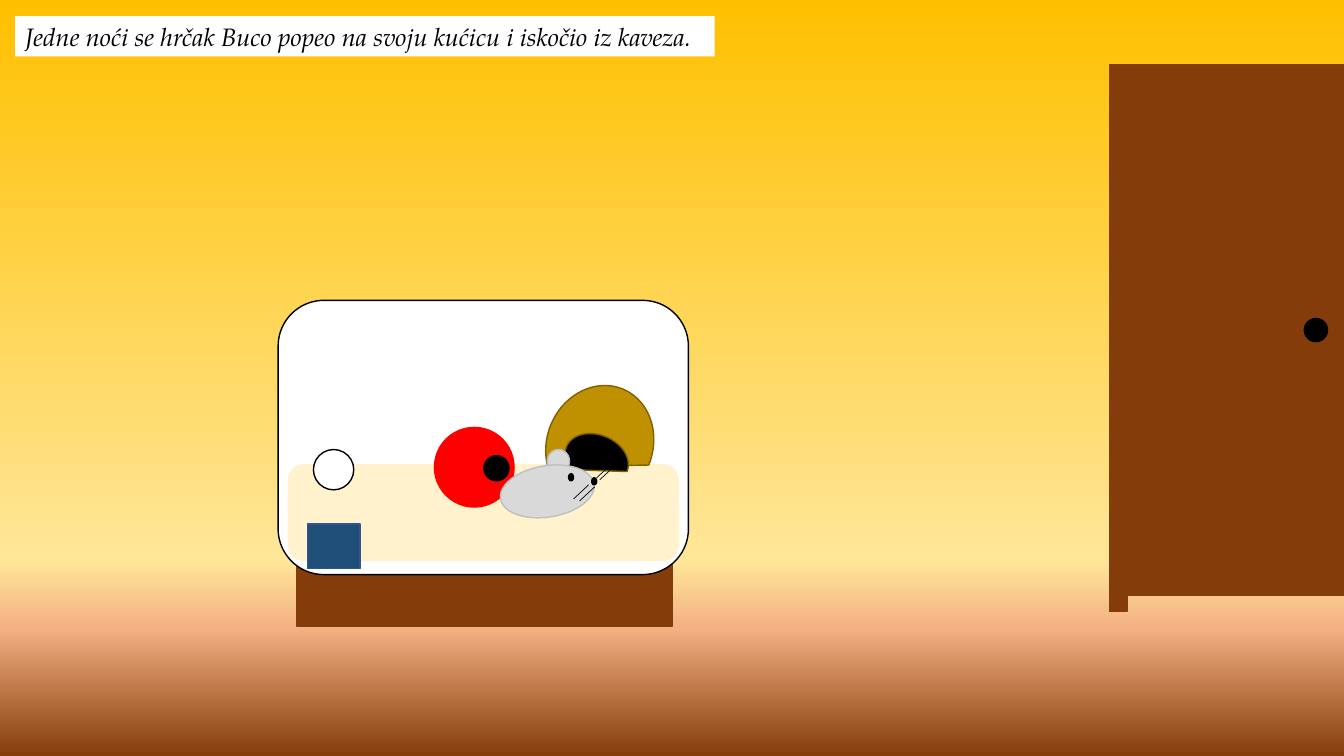
from dataclasses import dataclass

from lxml import etree
from pptx import Presentation
from pptx.dml.color import RGBColor
from pptx.enum import shapes, text
from pptx.oxml.ns import qn
from pptx.util import Inches, Pt

SHAPE = shapes.MSO_SHAPE


@dataclass(frozen=True)
class Theme:
    black: str = "000000"
    white: str = "FFFFFF"
    wood: str = "843C0B"
    bedding: str = "FFF2CC"
    bowl: str = "1F4E79"
    bowl_edge: str = "325491"
    house: str = "BF9000"
    house_edge: str = "806000"
    wheel: str = "FF0000"
    fur: str = "D9D9D9"
    fur_edge: str = "BFBFBF"
    background: tuple = ((0, "FFC000"), (74, "FFE699"), (83, "F4B183"), (100, "843C0B"))
    font: str = "TeX Gyre Pagella"
    caption_size: int = 18
    outline: float = 1
    whisker: float = 0.5


def write_text(frame, content, font, size, color, italic=False):
    run = frame.paragraphs[0].add_run()
    run.text = content
    run.font.name = font
    run.font.size = Pt(size)
    run.font.italic = italic
    run.font.color.rgb = RGBColor.from_string(color)


class Scene:
    def __init__(self, slide, theme):
        self.slide = slide
        self.theme = theme
        self.group = None

    def background(self):
        fill = self.slide.background.fill
        fill.gradient()
        fill.gradient_angle = 270
        stops = self.slide.element.find(".//" + qn("a:gsLst"))
        for stop in list(stops):
            stops.remove(stop)
        for percent, color in self.theme.background:
            stop = etree.SubElement(stops, qn("a:gs"), pos=str(percent * 1000))
            etree.SubElement(stop, qn("a:srgbClr"), val=color)

    def start_group(self):
        self.group = self.slide.shapes.add_group_shape()

    def shape(self, kind, left, top, width, height, fill, edge=None, rotation=0):
        shape = self.group.shapes.add_shape(
            kind, Inches(left), Inches(top), Inches(width), Inches(height))
        shape.shadow.inherit = False
        shape.rotation = rotation
        shape.fill.solid()
        shape.fill.fore_color.rgb = RGBColor.from_string(fill)
        shape.line.color.rgb = RGBColor.from_string(edge or fill)
        shape.line.width = Pt(self.theme.outline)

    def line(self, x1, y1, x2, y2):
        line = self.group.shapes.add_connector(
            shapes.MSO_CONNECTOR.STRAIGHT, Inches(x1), Inches(y1), Inches(x2), Inches(y2))
        line.line.color.rgb = RGBColor.from_string(self.theme.black)
        line.line.width = Pt(self.theme.whisker)
        etree.SubElement(line.element.spPr, qn("a:effectLst"))

    def caption(self, content, left, top, width, height):
        theme = self.theme
        box = self.slide.shapes.add_textbox(
            Inches(left), Inches(top), Inches(width), Inches(height))
        box.fill.solid()
        box.fill.fore_color.rgb = RGBColor.from_string(theme.white)
        box.text_frame.word_wrap = True
        box.text_frame.auto_size = text.MSO_AUTO_SIZE.SHAPE_TO_FIT_TEXT
        write_text(box.text_frame, content, font=theme.font, size=theme.caption_size,
                   color=theme.black, italic=True)


def main():
    presentation = Presentation()
    presentation.slide_height = Inches(7.5)
    presentation.slide_width = Inches(7.5 * 16 / 9)
    slide = presentation.slides.add_slide(presentation.slide_layouts[6])
    theme = Theme()
    scene = Scene(slide, theme)
    scene.background()

    # Cage on its stand, with bedding, bowl, house, wheel and ball
    scene.start_group()
    scene.shape(SHAPE.RECTANGLE, 2.94, 5.6, 3.73, 0.61, theme.wood)
    scene.shape(SHAPE.ROUNDED_RECTANGLE, 2.76, 2.98, 4.07, 2.72, theme.white, theme.black)
    scene.shape(SHAPE.ROUNDED_RECTANGLE, 2.86, 4.61, 3.87, 0.95, theme.bedding)
    scene.shape(SHAPE.RECTANGLE, 3.05, 5.2, 0.52, 0.44, theme.bowl, theme.bowl_edge)
    scene.shape(SHAPE.CHORD, 5.35, 3.89, 1.2, 1.05, theme.house, theme.house_edge, 112.3)
    scene.shape(SHAPE.OVAL, 4.31, 4.24, 0.79, 0.79, theme.wheel)
    scene.shape(SHAPE.OVAL, 4.8, 4.52, 0.25, 0.25, theme.black)
    scene.shape(SHAPE.OVAL, 3.11, 4.46, 0.4, 0.4, theme.white, theme.black)
    scene.shape(SHAPE.CHORD, 5.68, 4.23, 0.48, 0.65, theme.black, theme.house_edge, 112.3)

    # Hamster: ear, body, eye and nose, whiskers
    scene.start_group()
    scene.shape(SHAPE.OVAL, 5.43, 4.46, 0.22, 0.23, theme.fur, theme.fur_edge)
    scene.shape(SHAPE.OVAL, 4.96, 4.62, 0.94, 0.51, theme.fur, theme.fur_edge, 350.9)
    for left, top in ((5.64, 4.7), (5.87, 4.74)):
        scene.shape(SHAPE.OVAL, left, top, 0.05, 0.07, theme.black)
    for x, y in ((5.92, 4.74), (5.95, 4.76), (5.69, 4.95), (5.75, 4.97)):
        scene.line(x, y, x + 0.15, y - 0.14)

    # Caption
    scene.caption("Jedne noći se hrčak Buco popeo na svoju kućicu i iskočio iz kaveza.",
                  0.15, 0.16, 6.94, 0.4)

    # Door with knob and foot
    scene.start_group()
    scene.shape(SHAPE.RECTANGLE, 11.01, 0.64, 2.32, 5.27, theme.wood)
    scene.shape(SHAPE.OVAL, 12.94, 3.16, 0.23, 0.23, theme.black)
    scene.shape(SHAPE.RECTANGLE, 11.01, 5.9, 0.17, 0.17, theme.wood)

    presentation.save("out.pptx")


if __name__ == "__main__":
    main()
